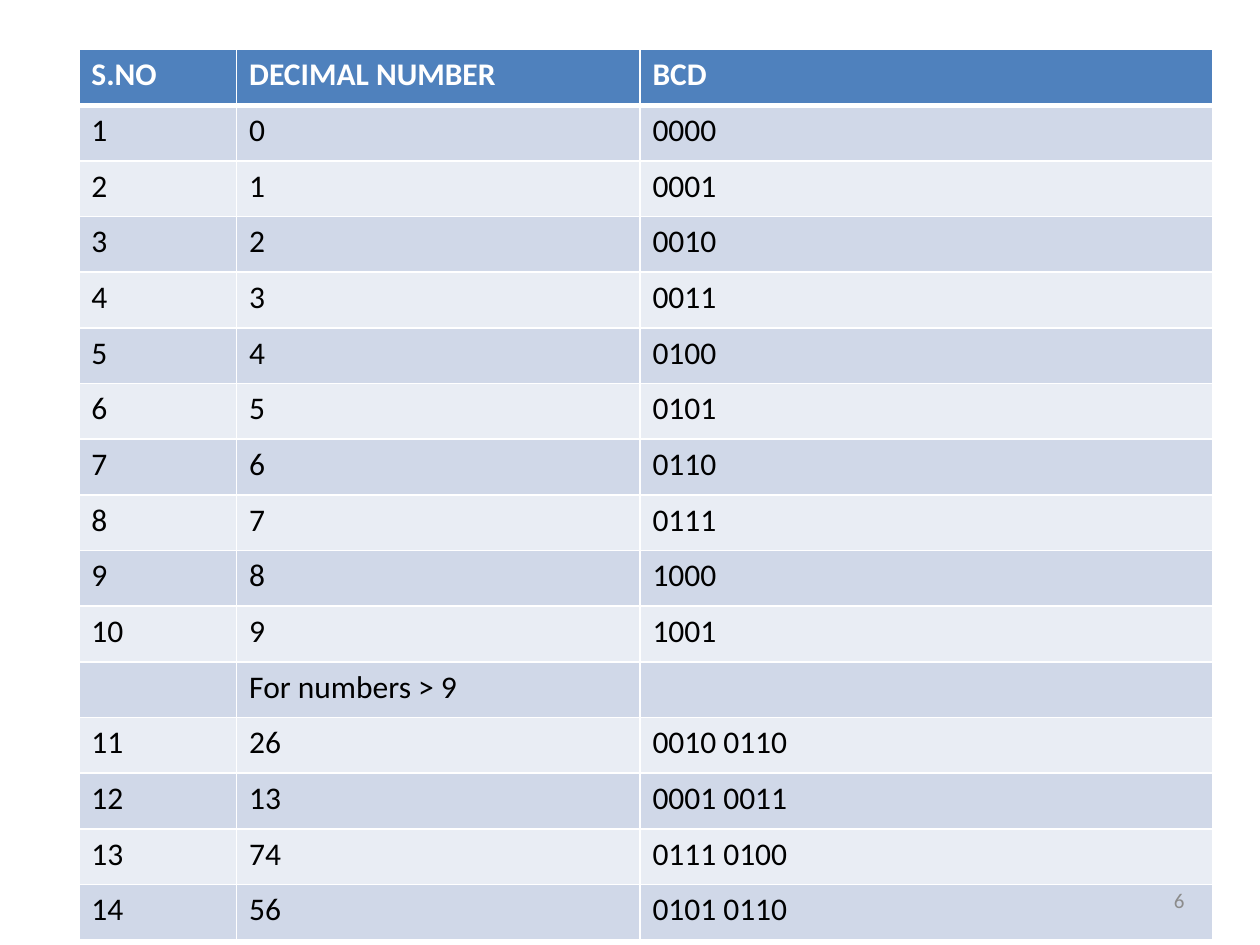
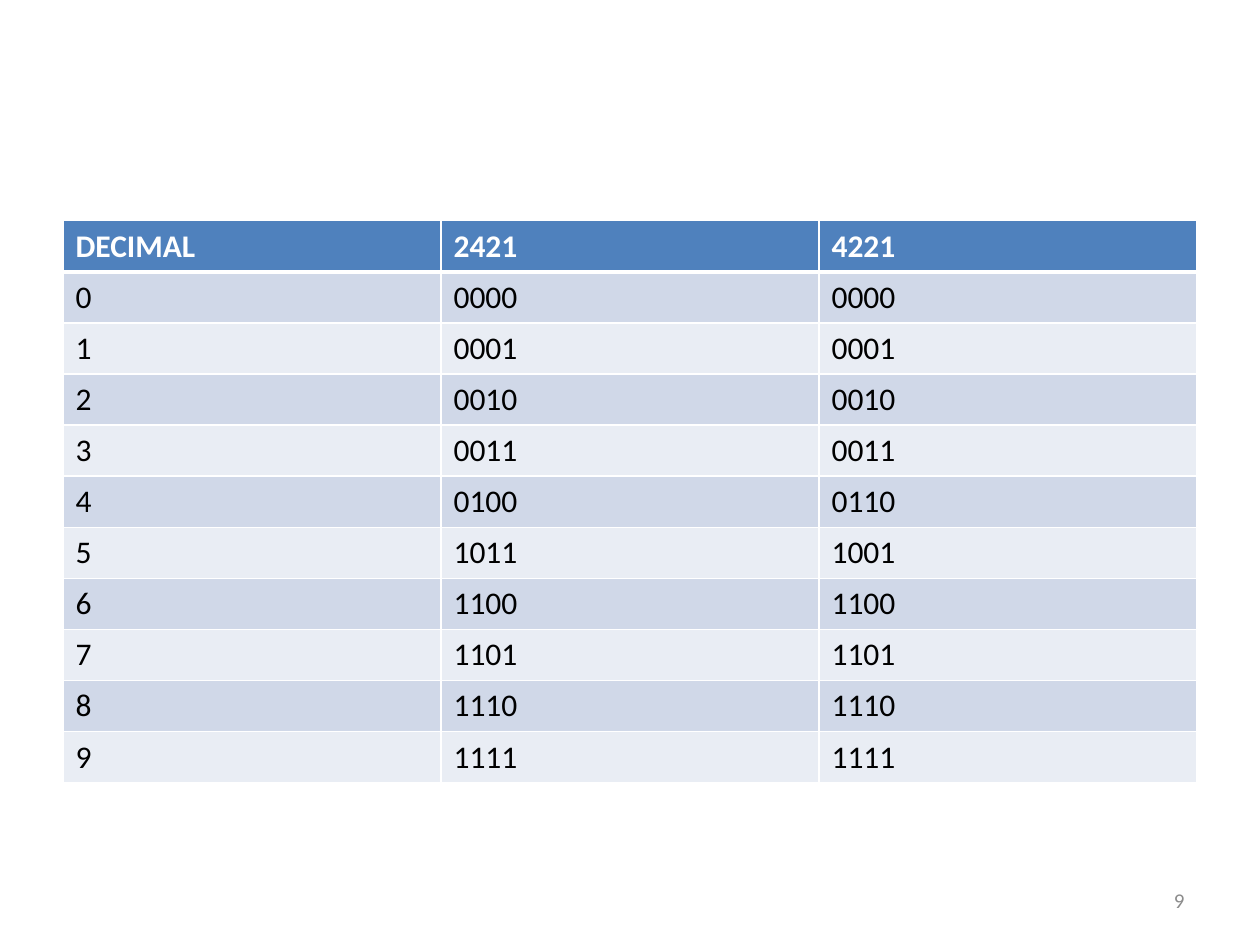
from lxml import etree
from pptx import Presentation
from pptx.dml.color import RGBColor
from pptx.enum.text import MSO_ANCHOR, PP_ALIGN
from pptx.oxml.ns import qn
from pptx.util import Cm, Pt

# Shared style
FONT = "Calibri"
WHITE, BLACK, GREY = "FFFFFF", "000000", "8C8C8C"
HEADER_FILL = "4F81BD"
BAND_FILLS = ("D0D8E8", "E9EDF4")
THIN, THICK = 1, 3
LEFT, RIGHT, MIDDLE = PP_ALIGN.LEFT, PP_ALIGN.RIGHT, MSO_ANCHOR.MIDDLE
BLANK_LAYOUT = 6

# Content
SINGLE_DIGITS = range(10)
LARGER_NUMBERS = (26, 13, 74, 56)
WEIGHTED_CODES = (
    ("0000", "0000"), ("0001", "0001"), ("0010", "0010"), ("0011", "0011"),
    ("0100", "0110"), ("1011", "1001"), ("1100", "1100"), ("1101", "1101"),
    ("1110", "1110"), ("1111", "1111"),
)


def rgb(hex_colour):
    return RGBColor.from_string(hex_colour)


def write_text(frame, text, size=18, colour=BLACK, bold=False, align=LEFT):
    paragraph = frame.paragraphs[0]
    paragraph.alignment = align
    run = paragraph.add_run()
    run.text = text
    run.font.name = FONT
    run.font.size = Pt(size)
    run.font.bold = bold
    run.font.color.rgb = rgb(colour)


def set_borders(cell, top=THIN, bottom=THIN):
    properties = cell._tc.get_or_add_tcPr()
    widths = {"a:lnL": THIN, "a:lnR": THIN, "a:lnT": top, "a:lnB": bottom}
    for side, width in widths.items():
        line = etree.SubElement(properties, qn(side), w=str(Pt(width)))
        fill = etree.SubElement(line, qn("a:solidFill"))
        etree.SubElement(fill, qn("a:srgbClr"), val=WHITE)


def add_code_table(slide, rows, left, top, column_widths, height):
    table = slide.shapes.add_table(
        len(rows), len(column_widths), Cm(left), Cm(top),
        Cm(sum(column_widths)), Cm(height)).table
    for column, width in zip(table.columns, column_widths):
        column.width = Cm(width)

    for row_index, values in enumerate(rows):
        is_header = row_index == 0
        fill = HEADER_FILL if is_header else BAND_FILLS[(row_index - 1) % 2]
        for column_index, value in enumerate(values):
            cell = table.cell(row_index, column_index)
            # Borders come before the fill in the cell properties
            set_borders(cell, top=THICK if row_index == 1 else THIN,
                        bottom=THICK if is_header else THIN)
            cell.fill.solid()
            cell.fill.fore_color.rgb = rgb(fill)
            if value:
                write_text(cell.text_frame, value, bold=is_header,
                           colour=WHITE if is_header else BLACK)


def add_page_number(slide, number):
    frame = slide.shapes.add_textbox(
        Cm(18.2), Cm(17.65), Cm(5.93), Cm(1.01)).text_frame
    frame.word_wrap = True
    frame.vertical_anchor = MIDDLE
    write_text(frame, str(number), size=12, colour=GREY, align=RIGHT)


def to_bcd(number):
    return " ".join(f"{int(digit):04b}" for digit in str(number))


def bcd_rows():
    numbers = [*SINGLE_DIGITS, *LARGER_NUMBERS]
    rows = [(str(serial), str(number), to_bcd(number))
            for serial, number in enumerate(numbers, start=1)]
    rows.insert(len(SINGLE_DIGITS), ("", "For numbers > 9", ""))
    return [("S.NO", "DECIMAL NUMBER", "BCD"), *rows]


def weighted_code_rows():
    rows = [(str(digit), *codes) for digit, codes in enumerate(WEIGHTED_CODES)]
    return [("DECIMAL", "2421", "4221"), *rows]


def main():
    deck = Presentation()
    deck.slide_width, deck.slide_height = Cm(25.4), Cm(19.05)
    layout = deck.slide_layouts[BLANK_LAYOUT]

    # BCD codes
    bcd_slide = deck.slides.add_slide(layout)
    add_code_table(bcd_slide, bcd_rows(), left=1.59, top=1,
                   column_widths=(3.18, 8.13, 11.55), height=17.96)
    add_page_number(bcd_slide, 6)

    # Weighted 2421 and 4221 codes
    weighted_slide = deck.slides.add_slide(layout)
    add_code_table(weighted_slide, weighted_code_rows(), left=1.27, top=4.45,
                   column_widths=(7.62,) * 3, height=11.33)
    add_page_number(weighted_slide, 9)

    deck.save("out.pptx")


if __name__ == "__main__":
    main()
